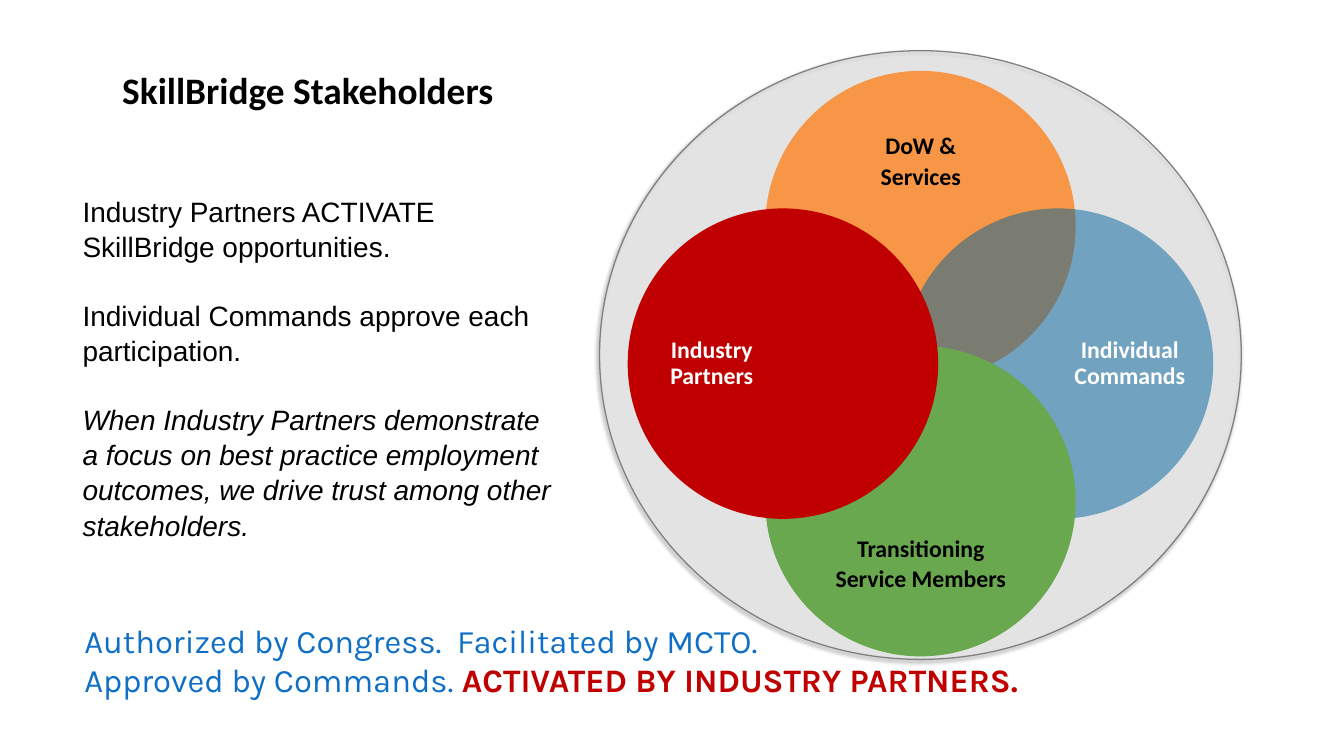
from lxml.etree import SubElement
from pptx import Presentation
from pptx.dml.color import RGBColor
from pptx.enum.shapes import MSO_SHAPE
from pptx.enum.text import MSO_ANCHOR, MSO_AUTO_SIZE, PP_ALIGN
from pptx.oxml.ns import qn
from pptx.util import Inches, Pt

BLACK = RGBColor(0x00, 0x00, 0x00)
WHITE = RGBColor(0xFF, 0xFF, 0xFF)
PALE_GREY = RGBColor(0xF2, 0xF2, 0xF2)
MID_GREY = RGBColor(0x7F, 0x7F, 0x7F)
ORANGE = RGBColor(0xF7, 0x96, 0x46)
TEAL = RGBColor(0x00, 0x63, 0x9C)
GREEN = RGBColor(0x6A, 0xA8, 0x4F)
RED = RGBColor(0xC0, 0x00, 0x00)
BLUE = RGBColor(0x0F, 0x6F, 0xC6)

DIAMETER = 5.08
CENTRE_LEFT, CENTRE_TOP, OFFSET = 12.52, 3.41, 2.25
TALL_LABEL = (1.95, 3.91)
WIDE_LABEL = (3.91, 1.61)

STAKEHOLDERS = [
    (0, -1, ORANGE, 100, (13.11, 1.85, *WIDE_LABEL), ["DoW &", "Services"], BLACK),
    (1, 0, TEAL, 50, (17.51, 4, *TALL_LABEL), ["Individual Commands"], WHITE),
    (0, 1, GREEN, 100, (13.11, 8.44, *WIDE_LABEL), ["Transitioning", "Service Members"], BLACK),
    (-1, 0, RED, 100, (10.67, 4, *TALL_LABEL), ["Industry Partners"], WHITE),
]

MESSAGES = [
    ("Industry Partners ACTIVATE SkillBridge opportunities.", False),
    ("Individual Commands approve each participation.", False),
    ("When Industry Partners demonstrate a focus on best practice employment "
     "outcomes, we drive trust among other stakeholders.", True),
]


def place(shape, left, top, width, height):
    """Move and size a shape, in inches."""
    shape.left, shape.top = Inches(left), Inches(top)
    shape.width, shape.height = Inches(width), Inches(height)


def prepare_frame(shape, margin_x, margin_y, anchor=MSO_ANCHOR.TOP):
    """Set wrapping, margins and anchor, and return the text frame."""
    frame = shape.text_frame
    frame.word_wrap = True
    frame.auto_size = MSO_AUTO_SIZE.NONE
    frame.vertical_anchor = anchor
    frame.margin_left = frame.margin_right = Inches(margin_x)
    frame.margin_top = frame.margin_bottom = Inches(margin_y)
    return frame


def get_paragraph(frame, index):
    """Return the first paragraph, or add a later one."""
    return frame.add_paragraph() if index else frame.paragraphs[0]


def add_run(paragraph, text, font_name, size, color, bold=False, italic=False):
    """Add one formatted run."""
    run = paragraph.add_run()
    run.text = text
    run.font.name = font_name
    run.font.size = Pt(size)
    run.font.color.rgb = color
    run.font.bold = bold
    run.font.italic = italic


def add_ellipse(shapes, left, top, width, height, color, opacity=100):
    """Add a filled ellipse without outline or shadow."""
    ellipse = shapes.add_shape(MSO_SHAPE.OVAL, Inches(left), Inches(top),
                               Inches(width), Inches(height))
    ellipse.shadow.inherit = False
    ellipse.fill.solid()
    ellipse.fill.fore_color.rgb = color
    ellipse.line.fill.background()
    if opacity < 100:
        fill_color = ellipse._element.spPr.find(qn("a:solidFill")).find(qn("a:srgbClr"))
        SubElement(fill_color, qn("a:alpha"), val=str(opacity * 1000))
    return ellipse


def add_shadow(shape, opacity, blur, distance, angle):
    """Give a shape a soft black outer shadow."""
    effects = shape._element.spPr.find(qn("a:effectLst"))
    shadow = SubElement(effects, qn("a:outerShdw"), blurRad=str(Pt(blur)),
                        dist=str(Pt(distance)), dir=str(angle * 60000),
                        rotWithShape="0")
    color = SubElement(shadow, qn("a:srgbClr"), val=str(BLACK))
    SubElement(color, qn("a:alpha"), val=str(opacity * 1000))


def add_label(shapes, box, lines, color):
    """Add a centred bold label."""
    label = shapes.add_textbox(*(Inches(value) for value in box))
    frame = prepare_frame(label, 0, 0, MSO_ANCHOR.MIDDLE)
    for index, line in enumerate(lines):
        paragraph = get_paragraph(frame, index)
        paragraph.alignment = PP_ALIGN.CENTER
        paragraph.line_spacing = 0.9
        paragraph.space_before = Pt(5.2 if index else 0)
        add_run(paragraph, line, "Calibri", 28, color, bold=True)


def add_diagram(slide):
    """Draw the overlapping stakeholder circles on their backdrop."""
    backdrop = add_ellipse(slide.shapes, 9.81, 0.83, 10.5, 9.96, PALE_GREY, 34)
    backdrop.line.color.rgb = MID_GREY
    backdrop.line.width = Pt(1.5)
    add_shadow(backdrop, 40, 4, 3, 135)
    group = slide.shapes.add_group_shape()
    for column, row, fill, opacity, box, lines, color in STAKEHOLDERS:
        add_ellipse(group.shapes, CENTRE_LEFT + column * OFFSET,
                    CENTRE_TOP + row * OFFSET, DIAMETER, DIAMETER, fill, opacity)
        add_label(group.shapes, box, lines, color)


def fill_title(title):
    """Write the slide title."""
    place(title, 1.9, 1.05, 10.58, 0.84)
    paragraph = prepare_frame(title, 0.1, 0.05).paragraphs[0]
    paragraph.alignment = PP_ALIGN.LEFT
    add_run(paragraph, "SkillBridge Stakeholders", "Calibri", 44, BLACK, bold=True)


def fill_body(body):
    """Write the messages as spaced paragraphs without bullets."""
    place(body, 1.25, 3.1, 8.03, 6.21)
    frame = prepare_frame(body, 0.1, 0.05)
    for index, (message, italic) in enumerate(MESSAGES):
        paragraph = get_paragraph(frame, index)
        paragraph.line_spacing = 1.05
        paragraph.space_before = Pt(39.5 if index else 0)
        properties = paragraph._p.get_or_add_pPr()
        properties.set("marL", "0")
        properties.set("indent", "0")
        SubElement(properties, qn("a:buNone"))
        add_run(paragraph, message, "Arial", 33, BLACK, italic=italic)


def add_footer(slide):
    """Add the two-line closing statement."""
    footer = slide.shapes.add_textbox(Inches(1.22), Inches(10.08), Inches(20.5), Inches(2.2))
    paragraph = prepare_frame(footer, 0.16, 0.08).paragraphs[0]
    add_run(paragraph, "Authorized by Congress.  Facilitated by MCTO.", "Karla", 38.6, BLUE)
    paragraph.add_line_break()
    add_run(paragraph, "Approved by Commands. ", "Karla", 38.6, BLUE)
    add_run(paragraph, "ACTIVATED BY INDUSTRY PARTNERS.", "Karla", 38.6, RED, bold=True)


def main():
    """Build and save the slide."""
    presentation = Presentation()
    presentation.slide_width = Inches(21.99)
    presentation.slide_height = Inches(12.37)
    slide = presentation.slides.add_slide(presentation.slide_layouts[1])
    fill_title(slide.shapes.title)
    fill_body(slide.placeholders[1])
    add_diagram(slide)
    add_footer(slide)
    presentation.save("out.pptx")


if __name__ == "__main__":
    main()
